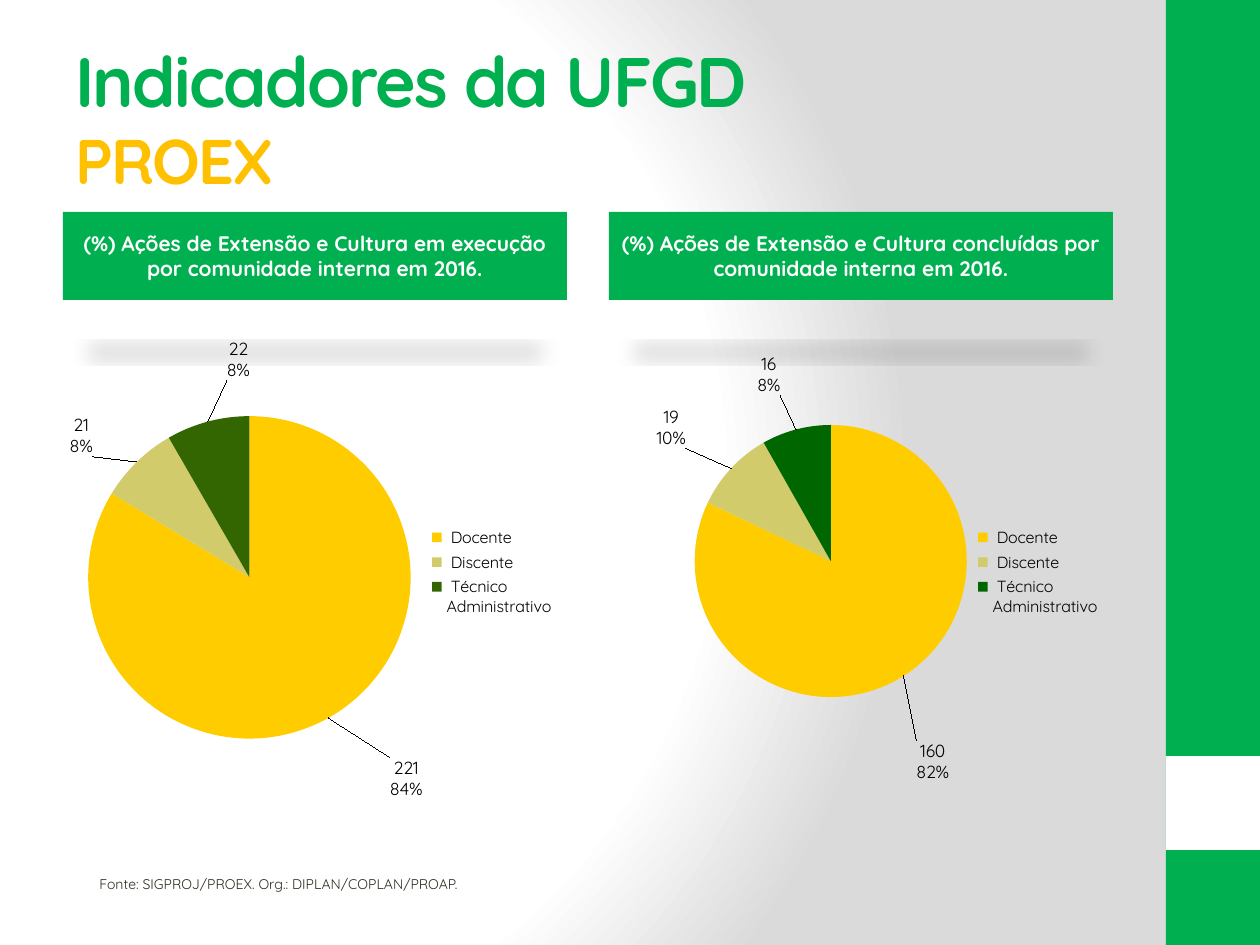
from pptx import Presentation
from pptx.chart.data import CategoryChartData
from pptx.dml.color import RGBColor
from pptx.enum.chart import XL_CHART_TYPE, XL_LEGEND_POSITION
from pptx.enum.shapes import MSO_SHAPE
from pptx.enum.text import MSO_ANCHOR, PP_ALIGN
from pptx.oxml import parse_xml
from pptx.oxml.ns import nsdecls
from pptx.util import Emu, Pt

FONT = "Quicksand"
GREEN, WHITE, BLACK = "00B050", "FFFFFF", "000000"
CATEGORIES = [" Docente", " Discente", " Técnico Administrativo"]
CHART_WIDTH, CHART_HEIGHT = 504, 544


def px(length):
    return Emu(round(length * 914400 / 126))


def color(value):
    return RGBColor.from_string(value)


def paint_background(page):
    """Circular gradient from white to grey."""
    stops = "".join(
        f'<a:gs pos="{place * 1000}"><a:srgbClr val="{value}"/></a:gs>'
        for place, value in [(0, WHITE), (75, WHITE), (100, "DADADA")])
    background = parse_xml(
        f'<p:bg {nsdecls("p", "a")}><p:bgPr><a:gradFill rotWithShape="1">'
        f'<a:gsLst>{stops}</a:gsLst><a:path path="circle">'
        '<a:fillToRect l="20000" t="50000" r="100000" b="50000"/></a:path>'
        '</a:gradFill><a:effectLst/></p:bgPr></p:bg>')
    page.element.cSld.insert(0, background)


def add_block(page, left, top, width, height, fill):
    block = page.shapes.add_shape(
        MSO_SHAPE.RECTANGLE, px(left), px(top), px(width), px(height))
    block.shadow.inherit = False
    block.fill.solid()
    block.fill.fore_color.rgb = color(fill)
    block.line.fill.background()
    return block


def add_span(para, text, size, ink, bold=False, spacing=None):
    span = para.add_run()
    span.text = text
    span.font.name = FONT
    span.font.size = Pt(size)
    span.font.bold = bold
    span.font.color.rgb = color(ink)
    if spacing is not None:
        span.font._element.set("spc", str(spacing * 100))


def start_text(box, anchor=MSO_ANCHOR.TOP, align=PP_ALIGN.LEFT):
    frame = box.text_frame
    frame.word_wrap = True
    frame.vertical_anchor = anchor
    para = frame.paragraphs[0]
    para.alignment = align
    return para


def add_text_box(page, left, top, width, height, **layout):
    box = page.shapes.add_textbox(px(left), px(top), px(width), px(height))
    return start_text(box, **layout)


def add_heading(page, left, text):
    """Green heading with a soft, flattened shadow cast upside down."""
    box = add_block(page, left, 212, CHART_WIDTH, 88, GREEN)
    shadow = parse_xml(
        f'<a:outerShdw {nsdecls("a")} blurRad="152400" dist="317500" '
        'dir="5400000" sx="90000" sy="-19000" rotWithShape="0">'
        '<a:srgbClr val="000000"><a:alpha val="15000"/></a:srgbClr>'
        '</a:outerShdw>')
    box._element.spPr.find(".//{*}effectLst").append(shadow)
    para = start_text(box, anchor=MSO_ANCHOR.MIDDLE, align=PP_ALIGN.CENTER)
    add_span(para, text, 12, WHITE, bold=True)


def layout_xml(**values):
    parts = "".join(f'<c:{key} val="{value}"/>' for key, value in values.items())
    return f"<c:layout><c:manualLayout>{parts}</c:manualLayout></c:layout>"


def label_xml(offsets):
    """Value and percent labels, each moved from its slice by (x, y) px."""
    shown = ('<c:dLblPos val="outEnd"/><c:showLegendKey val="0"/>'
             '<c:showVal val="1"/><c:showCatName val="0"/>'
             '<c:showSerName val="0"/><c:showPercent val="1"/>'
             '<c:showBubbleSize val="0"/><c:separator>\n</c:separator>')
    labels = ""
    for index, (across, down) in enumerate(offsets):
        place = layout_xml(x=round(across / CHART_WIDTH, 4),
                           y=round(down / CHART_HEIGHT, 4))
        labels += f'<c:dLbl><c:idx val="{index}"/>{place}{shown}</c:dLbl>'
    return (f'<c:dLbls {nsdecls("c")}>{labels}{shown}'
            '<c:showLeaderLines val="1"/></c:dLbls>')


def add_pie(page, left, values, slice_colors, plot, offsets):
    data = CategoryChartData()
    data.categories = CATEGORIES
    data.add_series("Series 1", values)
    chart = page.shapes.add_chart(
        XL_CHART_TYPE.PIE, px(left), px(300), px(CHART_WIDTH),
        px(CHART_HEIGHT), data).chart
    chart.has_title = False
    chart.font.name = FONT
    chart.font.size = Pt(10)
    chart.font.color.rgb = color(BLACK)

    # Legend
    chart.has_legend = True
    legend = chart.legend
    legend.position = XL_LEGEND_POSITION.RIGHT
    legend.include_in_layout = False
    legend.font.name = FONT
    legend.font.size = Pt(9.2)
    legend.font.color.rgb = color(BLACK)

    # Slices and labels
    series = chart.plots[0].series[0]
    for index, value in enumerate(slice_colors):
        fill = series.points[index].format.fill
        fill.solid()
        fill.fore_color.rgb = color(value)
    category_node = series._element.find("{*}cat")
    category_node.addprevious(parse_xml(label_xml(offsets)))

    # Plot area
    x, y, w, h = plot
    place = layout_xml(layoutTarget="inner", xMode="edge", yMode="edge",
                       x=x, y=y, w=w, h=h)
    place = place.replace("<c:layout>", f'<c:layout {nsdecls("c")}>', 1)
    area = chart._chartSpace.chart.plotArea
    for old in area.findall("{*}layout"):
        area.remove(old)
    area.insert(0, parse_xml(place))


def main():
    deck = Presentation()
    deck.slide_width, deck.slide_height = px(1260), px(945)
    page = deck.slides.add_slide(deck.slide_layouts[6])
    paint_background(page)

    # Side band
    add_block(page, 1166, 0, 94, 945, GREEN)
    add_block(page, 1166, 756, 94, 94, WHITE)

    # Headings
    add_heading(page, 63, "(%) Ações de Extensão e Cultura em execução "
                          "por comunidade interna em 2016.")
    add_heading(page, 609, "(%) Ações de Extensão e Cultura concluídas "
                           "por comunidade interna em 2016.")

    # Source note
    note = add_text_box(page, 87, 869, 427, 30)
    add_span(note, "Fonte: SIGPROJ/PROEX. Org.: DIPLAN/COPLAN/PROAP.", 8, "2F2B20")

    # Charts
    add_pie(page, 63, (221, 21, 22), ("FFCC00", "D2CB6C", "336600"),
            (0.05, 0.21, 0.64, 0.6), [(58, 33), (-39, 0), (44, -34)])
    add_pie(page, 609, (160, 19, 16), ("FFCC00", "D2CB6C", "006600"),
            (0.17, 0.08, 0.54, 0.8), [(9, 58), (-40, -15), (-14, -27)])

    # Title
    title = add_text_box(page, 63, 38, 1050, 158, anchor=MSO_ANCHOR.MIDDLE)
    add_span(title, "Indicadores da UFGD", 40, GREEN, bold=True, spacing=-1)
    title.add_line_break()
    add_span(title, "PROEX", 36, "FFC000", bold=True, spacing=-1)

    deck.save("out.pptx")


if __name__ == "__main__":
    main()
